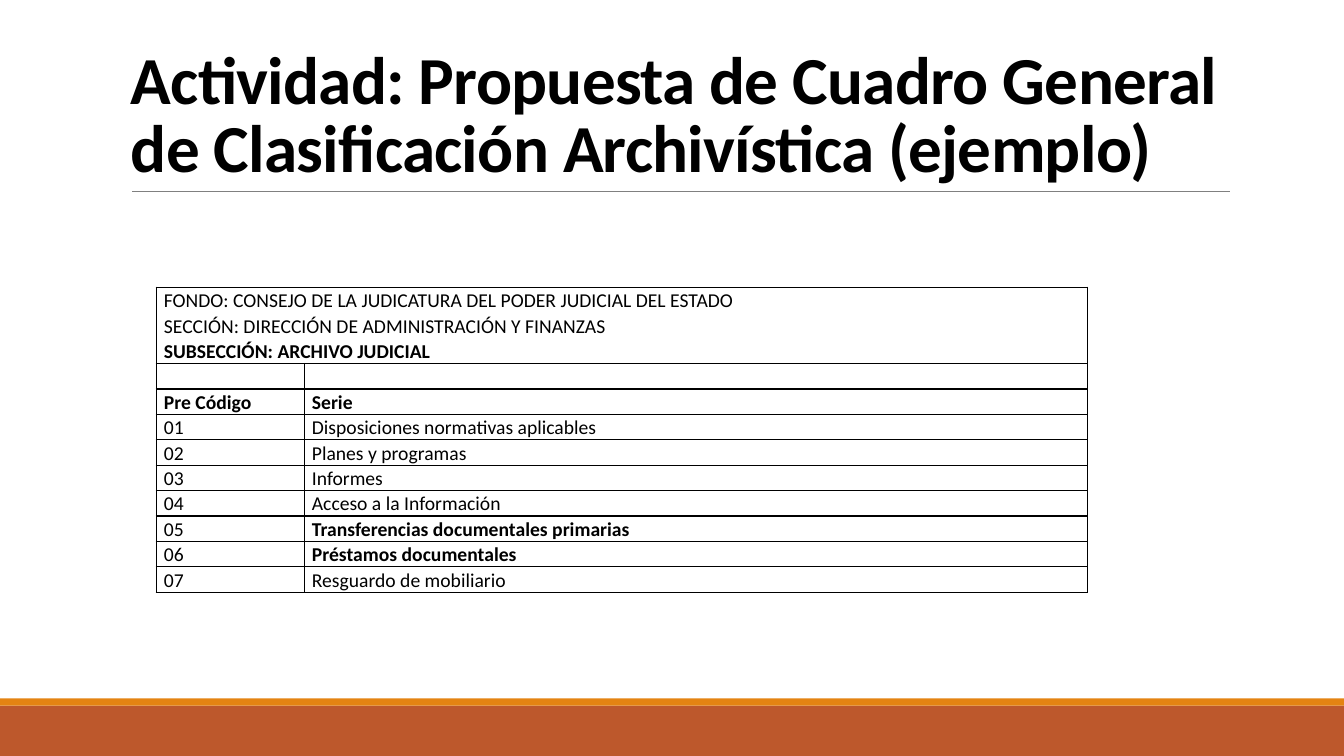
from lxml.etree import SubElement as Sub
from pptx import Presentation
from pptx.dml.color import RGBColor
from pptx.enum.shapes import MSO_CONNECTOR as Line, MSO_SHAPE as Shape
from pptx.enum.text import MSO_ANCHOR as Anchor
from pptx.oxml.ns import qn
from pptx.util import Cm, Pt

BLACK = RGBColor(0x00, 0x00, 0x00)
GRAY = RGBColor(0x80, 0x80, 0x80)
RUST = RGBColor(0xBD, 0x58, 0x2C)
AMBER = RGBColor(0xE4, 0x83, 0x12)

WIDTH, HEIGHT = 33.87, 19.05
ROW = 0.64

TITLE = "Actividad: Propuesta de Cuadro General de Clasificación Archivística (ejemplo)"
# Each line is (text, bold); each cell is a list of lines.
HEAD = [
    ("FONDO: CONSEJO DE LA JUDICATURA DEL PODER JUDICIAL DEL ESTADO", False),
    ("SECCIÓN: DIRECCIÓN DE ADMINISTRACIÓN Y FINANZAS", False),
    ("SUBSECCIÓN: ARCHIVO JUDICIAL", True),
]
SERIES = [
    ("Disposiciones normativas aplicables", False),
    ("Planes y programas", False),
    ("Informes", False),
    ("Acceso a la Información", False),
    ("Transferencias documentales primarias", True),
    ("Préstamos documentales", True),
    ("Resguardo de mobiliario", False),
]


class Deck:
    font = "Calibri"
    size = 14
    spacing = 1.07

    def __init__(self):
        self.prs = Presentation()
        self.prs.slide_width, self.prs.slide_height = Cm(WIDTH), Cm(HEIGHT)
        self.slide = self.prs.slides.add_slide(self.prs.slide_layouts[6])
        self.shapes = self.slide.shapes

    def band(self, top, height, color):
        rect = self.shapes.add_shape(Shape.RECTANGLE, 0, Cm(top), Cm(WIDTH), Cm(height))
        rect.shadow.inherit = False
        rect.fill.solid()
        rect.fill.fore_color.rgb = color
        rect.line.fill.background()

    def rule(self, left, right, top):
        line = self.shapes.add_connector(
            Line.STRAIGHT, Cm(left), Cm(top), Cm(right), Cm(top))
        line.line.color.rgb = GRAY
        line.line.width = Pt(0.5)
        Sub(line._element.spPr, qn("a:effectLst"))

    def text(self, para, words, size, bold):
        run = para.add_run()
        run.text = words
        font = run.font
        font.name, font.size, font.bold = self.font, Pt(size), bold
        font.color.rgb = BLACK
        return run

    def title(self, words, left, top, width, height):
        frame = self.shapes.add_textbox(
            Cm(left), Cm(top), Cm(width), Cm(height)).text_frame
        frame.word_wrap = True
        frame.vertical_anchor = Anchor.BOTTOM
        para = frame.paragraphs[0]
        para.line_spacing = 0.85
        run = self.text(para, words, 48, True)
        run.font._element.set("spc", "-50")

    def border(self, cell):
        props = cell._tc.get_or_add_tcPr()
        for side in ("lnL", "lnR", "lnT", "lnB"):
            edge = Sub(props, qn("a:" + side), w=str(Pt(1)))
            fill = Sub(edge, qn("a:solidFill"))
            Sub(fill, qn("a:srgbClr"), val=str(BLACK))

    def cell(self, cell, lines):
        cell.margin_left = cell.margin_right = Cm(0.19)
        cell.margin_top = cell.margin_bottom = 0
        self.border(cell)
        cell.fill.background()
        frame = cell.text_frame
        for i, (words, bold) in enumerate(lines):
            para = frame.add_paragraph() if i else frame.paragraphs[0]
            para.line_spacing = self.spacing
            self.text(para, words, self.size, bold)
        if not lines:
            para = frame.paragraphs[0]
            para.line_spacing = self.spacing
            Sub(para._p, qn("a:endParaRPr"), sz=str(self.size * 100))

    def table(self, rows, left, top, widths):
        """Draw rows of cells; the first row spans every column."""
        heights = [ROW * max(1, *map(len, row)) for row in rows]
        grid = self.shapes.add_table(
            len(rows), len(widths), Cm(left), Cm(top),
            Cm(sum(widths)), Cm(sum(heights))).table
        grid.first_row = grid.horz_banding = False
        for col, width in zip(grid.columns, widths):
            col.width = Cm(width)
        for r, (row, height) in enumerate(zip(rows, heights)):
            grid.rows[r].height = Cm(height)
            for c, lines in enumerate(row):
                self.cell(grid.cell(r, c), lines)
        grid.cell(0, 0).merge(grid.cell(0, len(widths) - 1))


def main():
    deck = Deck()
    deck.band(17.78, 1.27, RUST)
    deck.band(17.6, 0.18, AMBER)
    deck.rule(3.33, 30.99, 4.83)
    deck.title(TITLE, 3.05, 0.79, 27.94, 4.04)
    rows = [[HEAD, []], [[], []], [[("Pre Código", True)], [("Serie", True)]]]
    rows += [[[(f"{n:02}", False)], [serie]] for n, serie in enumerate(SERIES, 1)]
    deck.table(rows, 3.94, 7.24, [3.73, 19.74])
    deck.prs.save("out.pptx")


if __name__ == "__main__":
    main()
